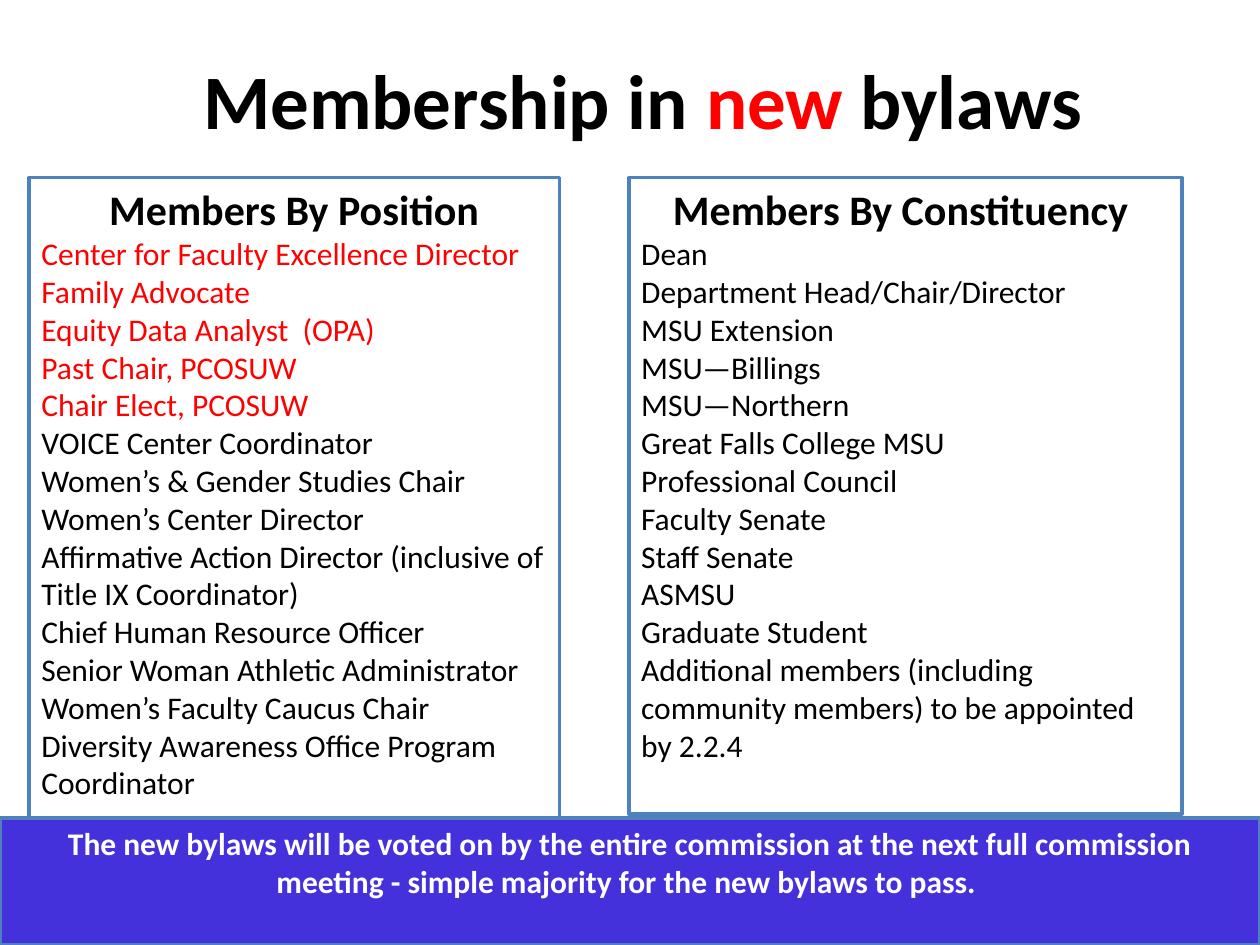
from dataclasses import dataclass

from pptx import Presentation
from pptx.dml.color import RGBColor
from pptx.enum import shapes, text
from pptx.util import Inches, Pt

COLORS = {
    "black": "000000",
    "white": "FFFFFF",
    "new": "FF0000",
    "border": "4F81BD",
    "banner": "4531DB",
}
FONT = "Calibri"


@dataclass
class Line:
    """One paragraph of a box."""
    words: str
    color: str = "black"
    size: int = 18
    bold: bool = False
    centered: bool = False


@dataclass
class Box:
    """A bordered rectangle; lengths in inches."""
    left: float
    top: float
    width: float
    height: float
    fill: str
    lines: list[Line]


def rgb(name: str) -> RGBColor:
    return RGBColor.from_string(COLORS[name])


def heading(words: str) -> Line:
    return Line(words, size=24, bold=True, centered=True)


def style_font(font, size: int, bold: bool) -> None:
    font.name = FONT
    font.size = Pt(size)
    font.bold = bold


def draw_box(slide, box: Box) -> None:
    panel = slide.shapes.add_shape(
        shapes.MSO_SHAPE.RECTANGLE,
        Inches(box.left), Inches(box.top), Inches(box.width), Inches(box.height))
    panel.shadow.inherit = False
    panel.fill.solid()
    panel.fill.fore_color.rgb = rgb(box.fill)
    panel.line.color.rgb = rgb("border")
    panel.line.width = Pt(2)

    frame = panel.text_frame
    frame.word_wrap = True
    frame.auto_size = text.MSO_AUTO_SIZE.SHAPE_TO_FIT_TEXT
    frame.vertical_anchor = text.MSO_ANCHOR.TOP
    for index, line in enumerate(box.lines):
        paragraph = frame.add_paragraph() if index else frame.paragraphs[0]
        paragraph.text = line.words
        paragraph.alignment = text.PP_ALIGN.CENTER if line.centered else text.PP_ALIGN.LEFT
        style_font(paragraph.font, line.size, line.bold)
        paragraph.font.color.rgb = rgb(line.color)


def draw_title(slide, parts: list[tuple[str, str]]) -> None:
    title = slide.shapes.title
    title.left, title.top = Inches(0.6), Inches(0.16)
    title.width, title.height = Inches(9), Inches(1.25)
    title.text_frame.vertical_anchor = text.MSO_ANCHOR.MIDDLE
    paragraph = title.text_frame.paragraphs[0]
    paragraph.alignment = text.PP_ALIGN.CENTER
    style_font(paragraph.font, 44, True)
    for words, color in parts:
        run = paragraph.add_run()
        run.text = words
        run.font.color.rgb = rgb(color)


# Content
NEW_POSITIONS = [
    "Center for Faculty Excellence Director",
    "Family Advocate",
    "Equity Data Analyst  (OPA)",
    "Past Chair, PCOSUW",
    "Chair Elect, PCOSUW",
]
KEPT_POSITIONS = [
    "VOICE Center Coordinator",
    "Women’s & Gender Studies Chair",
    "Women’s Center Director",
    "Affirmative Action Director (inclusive of Title IX Coordinator)",
    "Chief Human Resource Officer",
    "Senior Woman Athletic Administrator",
    "Women’s Faculty Caucus Chair",
    "Diversity Awareness Office Program Coordinator",
]
CONSTITUENCIES = [
    "Dean",
    "Department Head/Chair/Director",
    "MSU Extension",
    "MSU—Billings",
    "MSU—Northern",
    "Great Falls College MSU",
    "Professional Council",
    "Faculty Senate",
    "Staff Senate",
    "ASMSU",
    "Graduate Student",
    "Additional members (including community members) to be appointed by 2.2.4",
]
VOTE_NOTE = (
    "The new bylaws will be voted on by the entire commission at the next full "
    "commission meeting - simple majority for the new bylaws to pass. "
)

BOXES = [
    # Members by position
    Box(0.23, 1.41, 4.21, 5.35, "white",
        [heading("Members By Position")]
        + [Line(position, "new") for position in NEW_POSITIONS]
        + [Line(position) for position in KEPT_POSITIONS]),
    # Members by constituency
    Box(4.99, 1.41, 4.39, 5.05, "white",
        [heading("Members By Constituency ")]
        + [Line(constituency) for constituency in CONSTITUENCIES]),
    # Voting banner
    Box(0, 6.49, 10, 1.01, "banner",
        [Line(VOTE_NOTE, "white", bold=True, centered=True)]),
]


def main() -> None:
    deck = Presentation()
    deck.slide_width, deck.slide_height = Inches(10), Inches(7.5)
    slide = deck.slides.add_slide(deck.slide_layouts.get_by_name("Title Only"))
    draw_title(slide, [("Membership in ", "black"), ("new", "new"), (" bylaws", "black")])
    for box in BOXES:
        draw_box(slide, box)
    deck.save("out.pptx")


if __name__ == "__main__":
    main()
